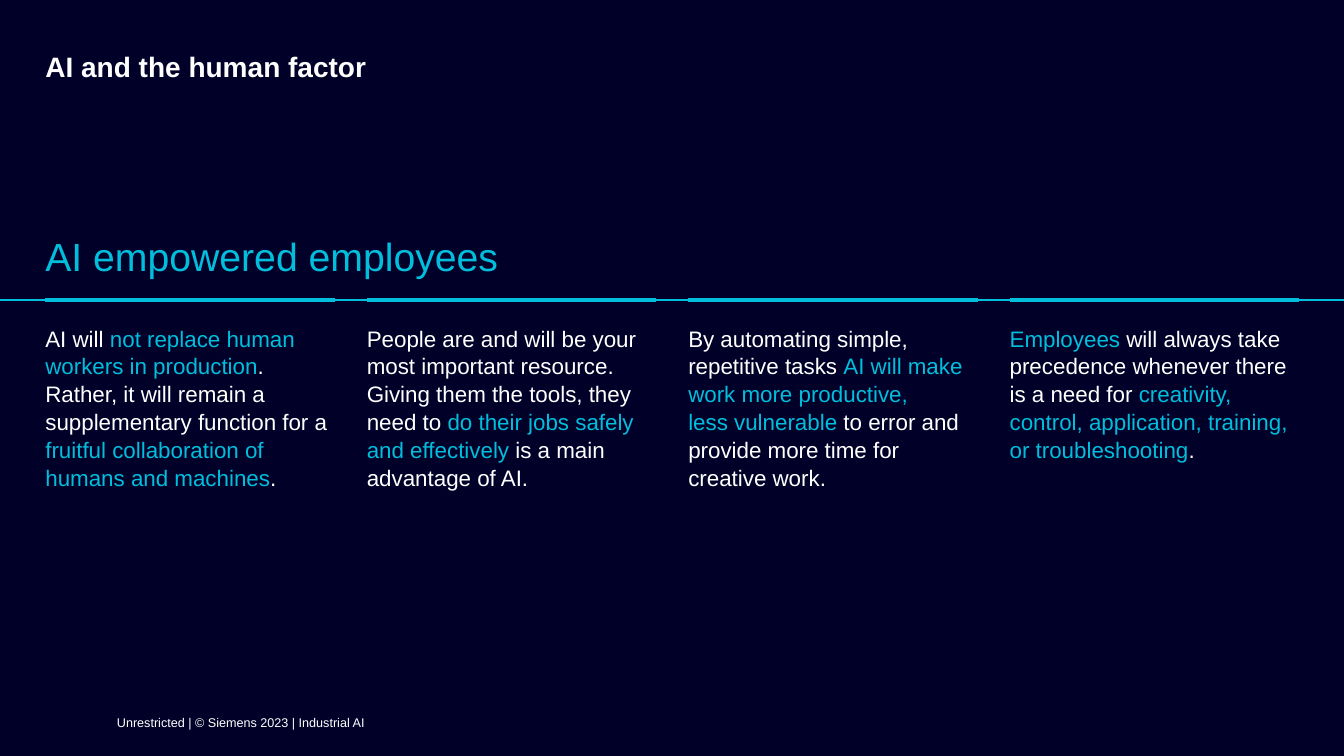
from pptx import Presentation
from pptx.dml.color import RGBColor
from pptx.enum.shapes import MSO_CONNECTOR
from pptx.enum.text import MSO_ANCHOR
from pptx.oxml.ns import qn
from pptx.util import Pt
from lxml.etree import SubElement

NAVY = RGBColor(0x00, 0x00, 0x28)
CYAN = RGBColor(0x00, 0xBE, 0xDC)
WHITE = RGBColor(0xFF, 0xFF, 0xFF)

PAGE_WIDTH, PAGE_HEIGHT = 960, 540
MARGIN = 32.4
COLUMN_WIDTH = 206.8
COLUMN_STEP = 229.6
RULE_TOP = 214.4

# Text between bars is highlighted.
COLUMNS = [
    "AI will |not replace human workers in production|. Rather, it will remain a "
    "supplementary function for a |fruitful collaboration of humans and machines|.",
    "People are and will be your most important resource. Giving them the tools, "
    "they need to |do their jobs safely and effectively |is a main advantage of AI.",
    "By automating simple, repetitive tasks |AI will make work more productive, \n"
    "less vulnerable |to error and provide more time for creative work.",
    "|Employees| will always take precedence whenever there is a need for "
    "|creativity, control, application, training, or troubleshooting|.",
]


def set_values(target, values):
    for name, value in values.items():
        setattr(target, name, value)


def place(box, left, top, width, height):
    set_values(box, {"left": Pt(left), "top": Pt(top),
                     "width": Pt(width), "height": Pt(height)})


def set_frame(frame, anchor, top=0, bottom=0):
    set_values(frame, {"word_wrap": True, "vertical_anchor": anchor,
                       "margin_left": 0, "margin_right": 0,
                       "margin_top": Pt(top), "margin_bottom": Pt(bottom)})


def add_span(para, text, size, color, bold=False):
    for number, line in enumerate(text.split("\n")):
        if number:
            para.add_line_break()
        span = para.add_run()
        span.text = line
        set_values(span.font, {"name": "Arial", "size": Pt(size), "bold": bold})
        span.font.color.rgb = color


def add_text(page, place_values, text, size, colors, anchor, spacing=1.0, bottom=0):
    """Add a text box whose bar-separated spans take the colours in turn."""
    box = page.shapes.add_textbox(*map(Pt, place_values))
    set_frame(box.text_frame, anchor, bottom=bottom)
    para = box.text_frame.paragraphs[0]
    para.line_spacing = spacing
    # A single colour means the bars are ordinary characters.
    spans = text.split("|") if len(colors) > 1 else [text]
    for number, span in enumerate(spans):
        if span:
            add_span(para, span, size, colors[number % len(colors)])


def add_rule(page, left, right, weight):
    rule = page.shapes.add_connector(
        MSO_CONNECTOR.STRAIGHT, Pt(left), Pt(RULE_TOP), Pt(right), Pt(RULE_TOP))
    rule.line.color.rgb = CYAN
    rule.line.width = Pt(weight)
    SubElement(rule._element.spPr, qn("a:effectLst"))


def add_title(page, text):
    title = page.shapes.title
    place(title, MARGIN, 37.4, 777, 45.4)
    set_frame(title.text_frame, MSO_ANCHOR.TOP, top=1)
    para = title.text_frame.paragraphs[0]
    set_values(para, {"alignment": 1, "line_spacing": 0.9})
    add_span(para, text, 20, WHITE, bold=True)


def main():
    deck = Presentation()
    set_values(deck, {"slide_width": Pt(PAGE_WIDTH), "slide_height": Pt(PAGE_HEIGHT)})
    page = deck.slides.add_slide(deck.slide_layouts.get_by_name("Title Only"))
    page.background.fill.solid()
    page.background.fill.fore_color.rgb = NAVY

    add_title(page, "AI and the human factor")
    add_text(page, (MARGIN, 165.6, 895.6, 33.8), "AI empowered employees",
             28, [CYAN], MSO_ANCHOR.BOTTOM)
    add_rule(page, 0, PAGE_WIDTH, 1)
    for number, text in enumerate(COLUMNS):
        left = MARGIN + number * COLUMN_STEP
        add_rule(page, left, left + COLUMN_WIDTH, 3)
        add_text(page, (left, 231.1, COLUMN_WIDTH, 116.6), text,
                 16, [WHITE, CYAN], MSO_ANCHOR.TOP, spacing=1.04)
    add_text(page, (83.5, 496.8, 725.8, 43.2),
             "Unrestricted | © Siemens 2023 | Industrial AI",
             9, [WHITE], MSO_ANCHOR.MIDDLE, bottom=5)
    deck.save("out.pptx")


if __name__ == "__main__":
    main()
